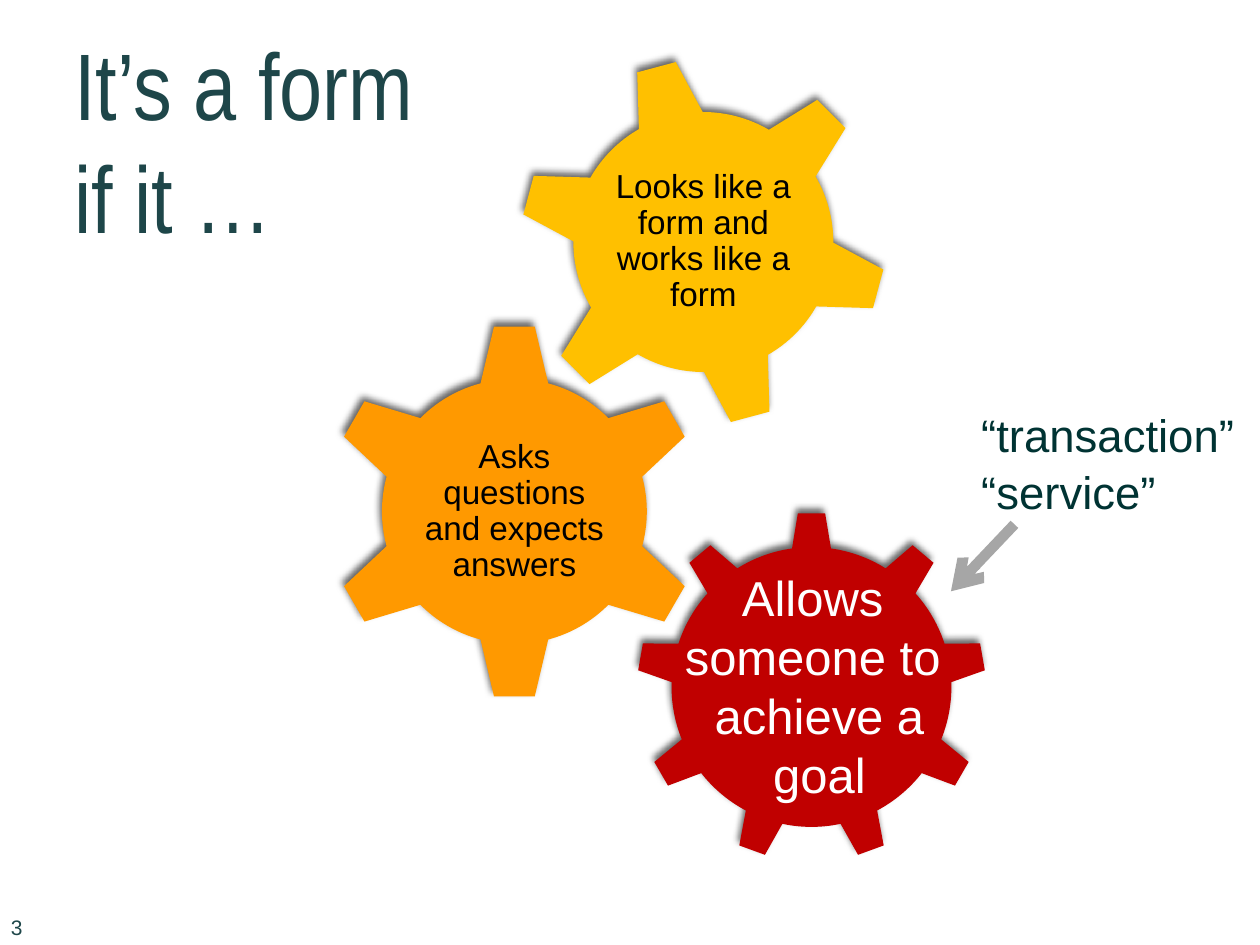
from math import atan, cos, degrees, radians, sin, tan

from lxml import etree
from pptx import Presentation
from pptx.dml.color import RGBColor
from pptx.enum import shapes, text
from pptx.oxml import parse_xml
from pptx.oxml.ns import nsdecls, qn
from pptx.util import Cm, Pt

COLORS = {"title": "1E4649", "label": "003333", "arrow": "A6A6A6",
          "black": "000000", "white": "FFFFFF",
          "yellow": "FFC000", "orange": "FF9900", "red": "C00000"}

# Lengths in cm, angles in degrees; tooth = half angles at base and tip
GEARS = [
    dict(center=(16.36, 13.85), hub=2.82, tip=3.51, teeth=9, turn=0,
         tooth=(8, 4.5), color="red"),
    dict(center=(10.37, 10.31), hub=2.67, tip=3.75, teeth=6, turn=0,
         tooth=(14.8, 6.3), color="orange", text_width=3.66,
         text="Asks questions and expects answers"),
    dict(center=(14.18, 4.88), hub=2.62, tip=3.67, teeth=6, turn=45,
         tooth=(14.7, 6.3), color="yellow", text_width=4.06,
         text="Looks like a form and works like a form"),
]
TITLE = "It’s a form \vif it …"
TITLE_BOX = (1.5, 1.91, 8.1, 3.18)
GOAL = "Allows \vsomeone to \vachieve a\ngoal"
GOAL_BOX = (13.51, 11.32, 6.02, 5.05)
LABELS = [("“service”", (19.53, 9.22, 4.06, 1.37)),
          ("“transaction”", (19.53, 8.08, 5.69, 1.37))]
ARROW = (20.45, 10.57, 19.17, 11.92)
NUMBER_BOX = (0, 17.73, 1.52, 1.32)
MIDDLE, BOTTOM = text.MSO_ANCHOR.MIDDLE, text.MSO_ANCHOR.BOTTOM


def rgb(name):
    return RGBColor.from_string(COLORS[name])


def write(tf, content, size, color, align="LEFT", font="Arial", spacing=None, **frame):
    frame = {"word_wrap": True, "auto_size": text.MSO_AUTO_SIZE.NONE, **frame}
    for name, value in frame.items():
        setattr(tf, name, value)
    tf.text = content
    for p in tf.paragraphs:
        p.alignment = getattr(text.PP_ALIGN, align)
        p.line_spacing = spacing
        for r in p.runs:
            r.font.name, r.font.size = font, Pt(size)
            r.font.color.rgb = rgb(color)


def add_text(s, box, *args, **kwargs):
    write(s.shapes.add_textbox(*map(Cm, box)).text_frame, *args, **kwargs)


def gear_outline(center, hub, tip, teeth, turn, tooth):
    """Six points per tooth: four corners, then two controls of the hub arc."""
    base_half, tip_half = tooth
    pitch = 360 / teeth
    gap = pitch - 2 * base_half
    lead = atan(4 / 3 * tan(radians(gap) / 4))
    control, shift = hub / cos(lead), degrees(lead)
    corners = [(hub, -base_half), (tip, -tip_half), (tip, tip_half), (hub, base_half),
               (control, base_half + shift), (control, base_half + gap - shift)]
    polar = [(r, turn + i * pitch + a) for i in range(teeth) for r, a in corners]
    return [(Cm(center[0] + r * sin(radians(a))), Cm(center[1] - r * cos(radians(a))))
            for r, a in polar]


def curve_hub(sp):
    """Join the last three of every six segments into one Bezier curve."""
    lines = list(sp._element.iter(qn("a:lnTo")))
    for i in range(3, len(lines), 6):
        curve = lines[i]
        curve.tag = qn("a:cubicBezTo")
        for line in lines[i + 1:i + 3]:
            curve.append(line[0])
            line.getparent().remove(line)


def add_gear(s, color, text_width=None, text=None, **geometry):
    start, *rest = gear_outline(**geometry)
    builder = s.shapes.build_freeform(*start)
    builder.add_line_segments(rest + [start], close=True)
    sp = builder.convert_to_shape()
    curve_hub(sp)
    sp.fill.solid()
    sp.fill.fore_color.rgb = rgb(color)
    sp.line.fill.background()
    sp._element.spPr.append(parse_xml(
        f'<a:effectLst {nsdecls("a")}><a:outerShdw blurRad="{Pt(4)}" dist="{Pt(3)}" '
        f'dir="{245 * 60000}" rotWithShape="0"><a:srgbClr val="{COLORS["black"]}">'
        '<a:alpha val="60000"/></a:srgbClr></a:outerShdw></a:effectLst>'))
    if text:
        side = (sp.width - Cm(text_width)) // 2
        write(sp.text_frame, text, 19, "black", "CENTER", spacing=0.9,
              vertical_anchor=MIDDLE, margin_left=side, margin_right=side)


def add_arrow(s, ends):
    line = s.shapes.add_connector(shapes.MSO_CONNECTOR.STRAIGHT, *map(Cm, ends))
    line.line.width = Pt(6)
    line.line.color.rgb = rgb("arrow")
    etree.SubElement(line.line._get_or_add_ln(), qn("a:tailEnd"), type="arrow")
    etree.SubElement(line._element.spPr, qn("a:effectLst"))


prs = Presentation()
prs.slide_width, prs.slide_height = Cm(25.4), Cm(19.05)
s = prs.slides.add_slide(prs.slide_layouts[5])

title = s.shapes.title
title.left, title.top, title.width, title.height = map(Cm, TITLE_BOX)
write(title.text_frame, TITLE, 54, "title", font="Arial Narrow", vertical_anchor=BOTTOM,
      margin_left=0, margin_right=0, margin_top=0, margin_bottom=0)

add_text(s, NUMBER_BOX, "3", 12, "title", vertical_anchor=BOTTOM,
         margin_left=Cm(0.22), margin_bottom=Cm(0.11))
add_arrow(s, ARROW)
for label, box in LABELS:
    add_text(s, box, label, 26, "label", word_wrap=False)
for gear in GEARS:
    add_gear(s, **gear)
add_text(s, GOAL_BOX, GOAL, 28, "white", "CENTER")

prs.save("out.pptx")
